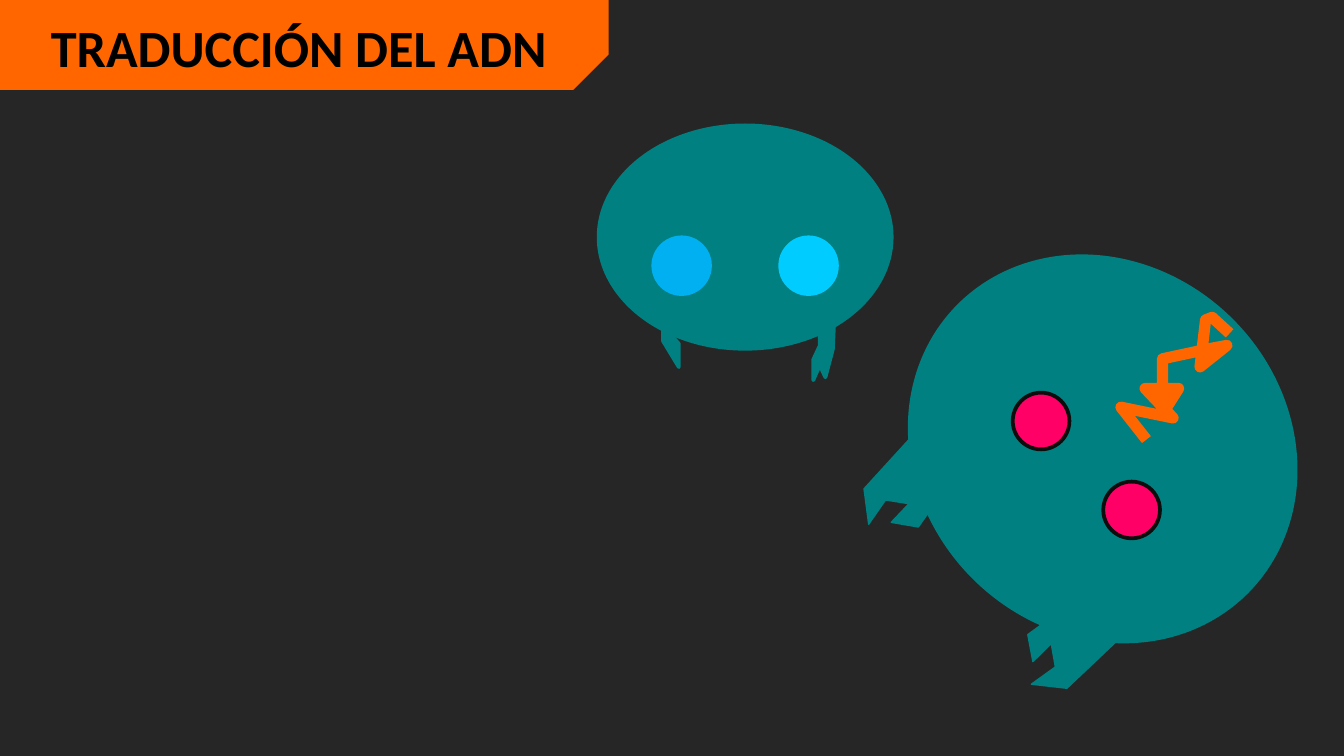
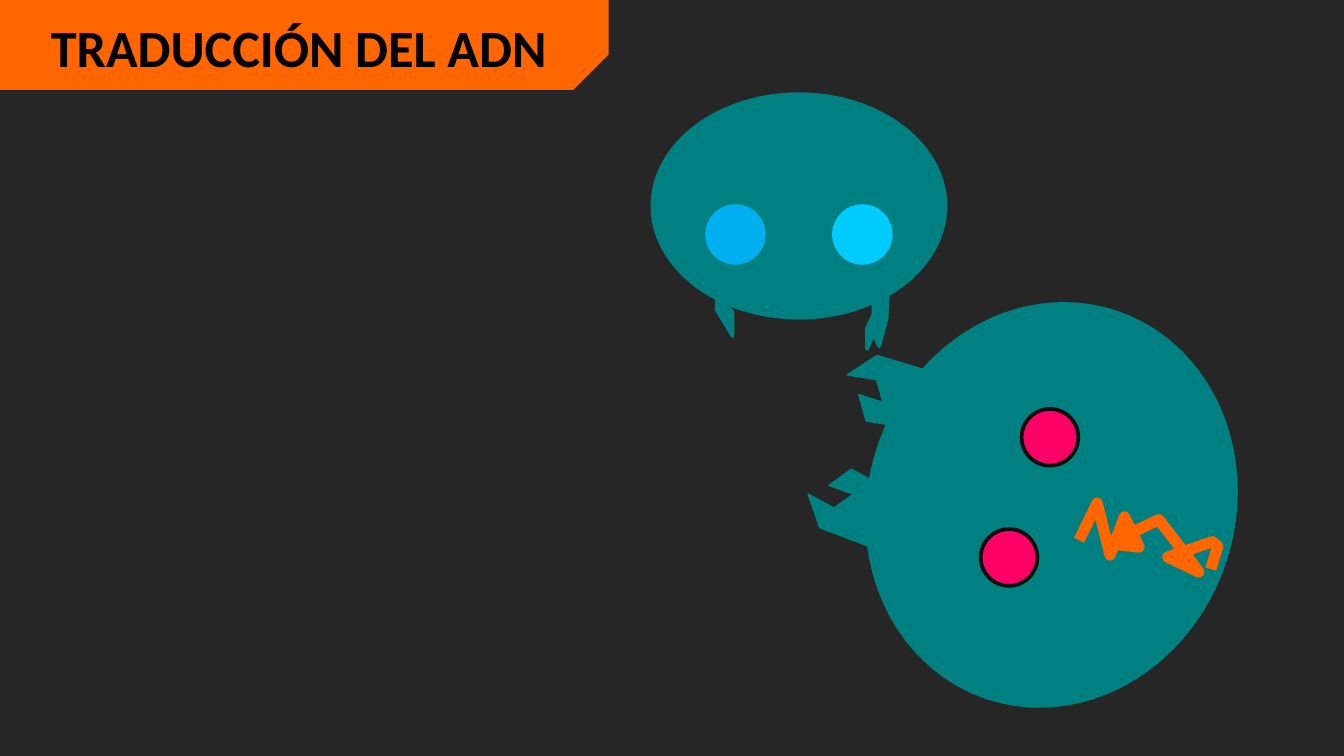
from dataclasses import dataclass
from math import cos, radians, sin

from pptx import Presentation
from pptx.dml.color import RGBColor
from pptx.enum.shapes import MSO_SHAPE
from pptx.enum.text import MSO_ANCHOR, MSO_AUTO_SIZE, PP_ALIGN
from pptx.util import Pt


@dataclass(frozen=True)
class Theme:
    background: str = "262626"
    banner: str = "FF6600"
    title: str = "000000"
    subunit: str = "008080"
    large_site: str = "FF0066"
    site_outline: str = "0D0D0D"
    left_site: str = "00B0F0"
    right_site: str = "00CCFF"
    strand: str = "FF6600"
    font: str = "Calibri"
    title_size: float = 28


THEME = Theme()
SITE_SIZE = 30.4
LARGE_SIZE = (219.5, 197)
SMALL_SIZE = (159, 121.7)

STRAND = [(13.2, -20), (-8.7, -22.8), (15.3, -38.3), (-6.5, -39), (6.3, -51.6),
          (9.7, -35.8), (-11, -56.9), (4, -79.6), (8.6, -86.2), (6.4, -67.9),
          (-9.1, -87.9), (-7.6, -91.4), (5.1, -91.8)]
CLAW = [(0, 0), (1.4, 38.6), (16.5, 50.4), (13.8, 34.8), (24.2, 27.4),
        (24.4, 41.2), (36.5, 32.8), (34.1, 18.3), (4.7, -6.7), (2.1, 7.1)]
LEGS = [(35.5, 98.5), (35.5, 116.5), (44, 130.5), (44, 118), (40.5, 114),
        (41, 101), (119.5, 103.5), (119.5, 119), (116, 126.5), (116, 137.5),
        (119.5, 129.5), (122.5, 136), (126.5, 121), (127.5, 98.5)]

SLIDES = [
    dict(large=(481, 142), tilt=44.5, claws=[(-77.6, 66.3), (77.6, 66.3)],
         small=(319.7, 66.2)),
    dict(large=(453.6, 172), tilt=108.8, claws=[(-47.1, 75.7), (53, 75)],
         small=(348.5, 49.5)),
]


def paint(sp, fill=None, line=None, width=0):
    sp.shadow.inherit = False
    if fill:
        sp.fill.solid()
        sp.fill.fore_color.rgb = RGBColor.from_string(fill)
    else:
        sp.fill.background()
    if line:
        sp.line.color.rgb = RGBColor.from_string(line)
        sp.line.width = Pt(width)
    else:
        sp.line.fill.background()
    return sp


def add_preset(slide, kind, box, **look):
    sp = slide.shapes.add_shape(kind, *map(Pt, box))
    return paint(sp, **look)


def add_site(slide, cx, cy, **look):
    box = (cx - SITE_SIZE / 2, cy - SITE_SIZE / 2, SITE_SIZE, SITE_SIZE)
    add_preset(slide, MSO_SHAPE.OVAL, box, width=2, **look)


def add_outline(slide, points, close=True, **look):
    start, *rest = [(Pt(x), Pt(y)) for x, y in points]
    builder = slide.shapes.build_freeform(*start)
    builder.add_line_segments(rest, close=close)
    return paint(builder.convert_to_shape(), **look)


def set_text(sp, text, size, color, bold=False):
    tf = sp.text_frame
    tf.word_wrap = False
    tf.auto_size = MSO_AUTO_SIZE.SHAPE_TO_FIT_TEXT
    tf.vertical_anchor = MSO_ANCHOR.TOP
    tf.margin_left = tf.margin_right = Pt(7.2)
    tf.margin_top = tf.margin_bottom = Pt(3.6)
    p = tf.paragraphs[0]
    p.alignment = PP_ALIGN.LEFT
    p.line_spacing = 1
    p.space_before = Pt(0)
    r = p.add_run()
    r.text = text
    r.font.name = THEME.font
    r.font.size = Pt(size)
    r.font.bold = bold
    r.font.color.rgb = RGBColor.from_string(color)


def draw_title(slide, text, box):
    x, y, w, h = box
    banner = add_preset(slide, MSO_SHAPE.SNIP_1_RECTANGLE, box, fill=THEME.banner)
    banner.adjustments[0] = 0.395
    banner.rotation = 180
    banner._element.spPr.xfrm.set("flipH", "1")
    title = slide.shapes.title
    title.left, title.top = Pt(x + 20), Pt(y + 4.3)
    title.width, title.height = Pt(w - 43), Pt(h - 7.2)
    set_text(title, text, THEME.title_size, THEME.title, bold=True)
    slide.shapes._spTree.append(title._element)


def draw_large_subunit(slide, box, tilt, claws):
    x, y, w, h = box
    c, s = cos(radians(tilt)), sin(radians(tilt))

    def place(px, py):
        return x + w / 2 + px * c - py * s, y + h / 2 + px * s + py * c

    body = add_preset(slide, MSO_SHAPE.OVAL, box, fill=THEME.subunit)
    body.rotation = tilt
    for side in (-1, 1):
        add_site(slide, *place(side * 34, 12.5),
                 fill=THEME.large_site, line=THEME.site_outline)
    add_outline(slide, [place(*pt) for pt in STRAND], close=False,
                line=THEME.strand, width=6)
    for side, (ax, ay) in zip((1, -1), claws):
        add_outline(slide, [place(ax + side * px, ay + py) for px, py in CLAW],
                    fill=THEME.subunit, line=THEME.subunit, width=0.75)


def draw_small_subunit(slide, box):
    x, y, w, h = box
    add_preset(slide, MSO_SHAPE.OVAL, box, fill=THEME.subunit)
    for side, color in ((-1, THEME.left_site), (1, THEME.right_site)):
        add_site(slide, x + w / 2 + side * 34, y + h / 2 + 15.3,
                 fill=color, line=color)
    add_outline(slide, [(x + px, y + py) for px, py in LEGS],
                fill=THEME.subunit, line=THEME.subunit, width=2)


def draw_slide(prs, large, tilt, claws, small):
    slide = prs.slides.add_slide(prs.slide_layouts.get_by_name("Title Only"))
    slide.background.fill.solid()
    slide.background.fill.fore_color.rgb = RGBColor.from_string(THEME.background)
    draw_title(slide, "TRADUCCIÓN DEL ADN", (0, 0, 326, 48.2))
    draw_large_subunit(slide, large + LARGE_SIZE, tilt, claws)
    draw_small_subunit(slide, small + SMALL_SIZE)


def main():
    prs = Presentation()
    prs.slide_width, prs.slide_height = Pt(720), Pt(405)
    for parts in SLIDES:
        draw_slide(prs, **parts)
    prs.save("out.pptx")


if __name__ == "__main__":
    main()
